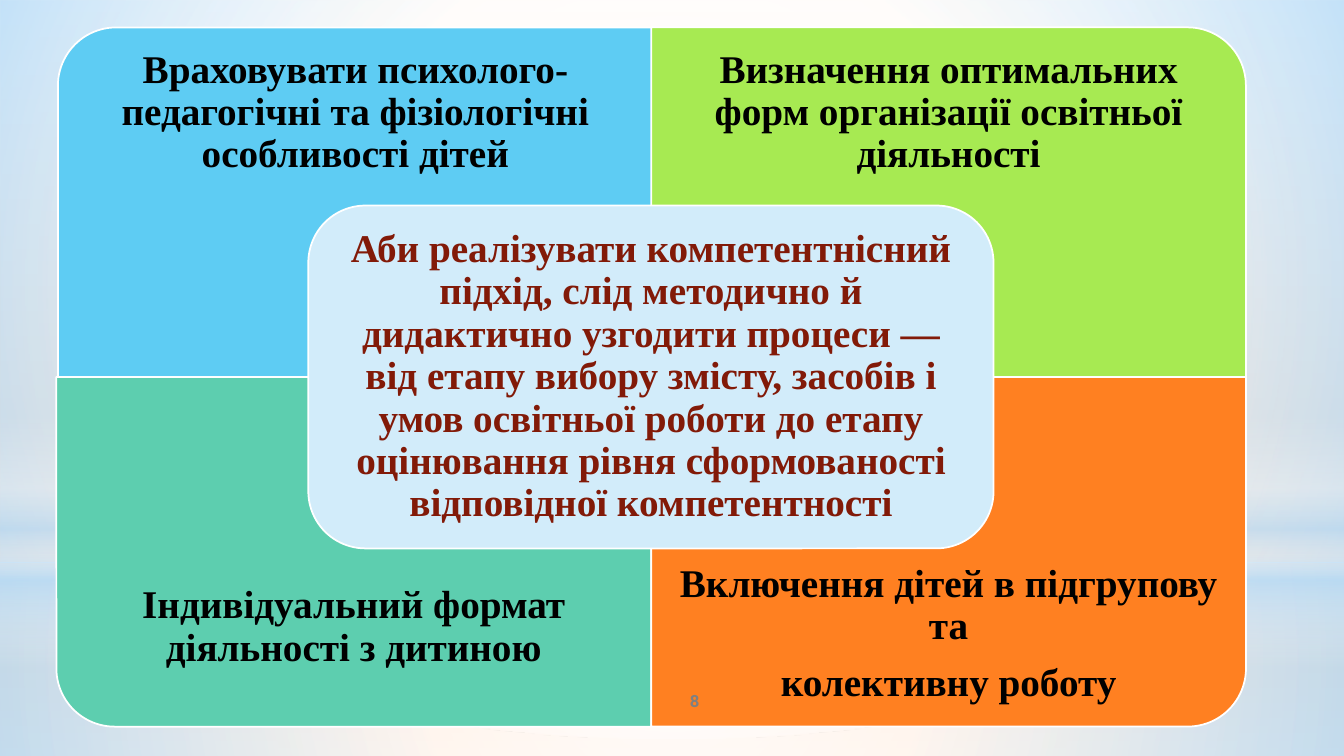
import dataclasses

import lxml.etree
import pptx
import pptx.dml.color
import pptx.enum.shapes
import pptx.enum.text
import pptx.oxml.ns
import pptx.util

Cm = pptx.util.Cm
Pt = pptx.util.Pt
Shape = pptx.enum.shapes.MSO_SHAPE
Anchor = pptx.enum.text.MSO_ANCHOR
qn = pptx.oxml.ns.qn


@dataclasses.dataclass(frozen=True)
class Theme:
    white: str = "FFFFFF"
    black: str = "000000"
    sky: str = "B4DCFA"
    blue: str = "5ECCF3"
    lime: str = "A7EA52"
    mint: str = "5DCEAF"
    orange: str = "FF8021"
    pale_blue: str = "D2ECFA"
    dark_red: str = "821A08"
    grey: str = "808080"
    peach: str = "FFC69B"
    cream: str = "FFF9F4"
    apricot: str = "FFD9BC"
    serif: str = "Times New Roman"
    sans: str = "Roboto"
    body: float = 28
    small: float = 12
    outline: float = 1.25


def rgb(color):
    return pptx.dml.color.RGBColor.from_string(color)


def write_text(frame, text, *, font, size, color, anchor=Anchor.TOP,
               inset=0.25, line_spacing=1, space_after=0):
    frame.word_wrap = True
    frame.vertical_anchor = anchor
    frame.margin_left = frame.margin_right = Cm(inset)
    frame.margin_top = frame.margin_bottom = Cm(inset)
    for index, line in enumerate(text.split("\n")):
        paragraph = frame.add_paragraph() if index else frame.paragraphs[0]
        paragraph.alignment = pptx.enum.text.PP_ALIGN.CENTER
        paragraph.line_spacing = line_spacing
        paragraph.space_after = Pt(space_after)
        run = paragraph.add_run()
        run.text = line
        run.font.name = font
        run.font.size = Pt(size)
        run.font.bold = True
        run.font.color.rgb = rgb(color)


def set_gradient(owner, fill, stops, radial):
    fill.gradient()
    gradient = next(owner.element.iter(qn("a:gradFill")))
    for child in list(gradient):
        gradient.remove(child)
    stop_list = lxml.etree.SubElement(gradient, qn("a:gsLst"))
    for position, color, opacity in stops:
        stop = lxml.etree.SubElement(stop_list, qn("a:gs"), pos=str(position * 1000))
        tint = lxml.etree.SubElement(stop, qn("a:srgbClr"), val=color)
        if opacity < 100:
            lxml.etree.SubElement(tint, qn("a:alpha"), val=str(opacity * 1000))
    if radial:
        circle = lxml.etree.SubElement(gradient, qn("a:path"), path="circle")
        lxml.etree.SubElement(circle, qn("a:fillToRect"),
                              dict.fromkeys("ltrb", "50000"))
    else:
        lxml.etree.SubElement(gradient, qn("a:lin"), ang="5400000", scaled="0")


class Composer:
    def __init__(self, slide, theme):
        self.slide = slide
        self.theme = theme

    def backdrop(self, stops):
        set_gradient(self.slide, self.slide.background.fill, stops, False)

    def shape(self, kind, left, top, width, height):
        shape = self.slide.shapes.add_shape(
            kind, Cm(left), Cm(top), Cm(width), Cm(height))
        shape.shadow.inherit = False
        return shape

    def glow(self, kind, box, stops, radial=True):
        glow = self.shape(kind, *box)
        glow.line.fill.background()
        set_gradient(glow, glow.fill, stops, radial)

    def panel(self, kind, box, color, turn=0):
        left, top, width, height = box
        if turn % 180:
            left += (width - height) / 2
            top += (height - width) / 2
            width, height = height, width
        panel = self.shape(kind, left, top, width, height)
        panel.rotation = turn
        panel.fill.solid()
        panel.fill.fore_color.rgb = rgb(color)
        panel.line.color.rgb = rgb(self.theme.white)
        panel.line.width = Pt(self.theme.outline)
        return panel

    def body(self, frame, text, color, anchor, inset):
        write_text(frame, text, font=self.theme.serif, size=self.theme.body,
                   color=color, anchor=anchor, inset=inset,
                   line_spacing=0.9, space_after=10)

    def text_box(self, left, top, width, height):
        return self.slide.shapes.add_textbox(
            Cm(left), Cm(top), Cm(width), Cm(height)).text_frame


def main():
    theme = Theme()
    deck = pptx.Presentation()
    deck.slide_width, deck.slide_height = Cm(33.87), Cm(19.05)
    composer = Composer(deck.slides.add_slide(deck.slide_layouts[6]), theme)

    composer.backdrop([(0, theme.cream, 100), (74, theme.peach, 100),
                       (83, theme.peach, 100), (100, theme.apricot, 100)])
    composer.glow(Shape.RECTANGLE, (0, 14.17, 33.87, 4.88),
                  [(0, theme.white, 91), (37, theme.white, 76), (100, theme.sky, 79)])
    composer.glow(Shape.RECTANGLE, (0, 0, 33.87, 14.17),
                  [(0, theme.white, 89), (48, theme.white, 62), (100, theme.sky, 79)])
    composer.glow(Shape.RECTANGLE, (0, 10.46, 33.87, 6.35),
                  [(0, theme.white, 0), (29, theme.white, 30), (45, theme.sky, 40),
                   (55, theme.white, 26), (65, theme.sky, 60), (100, theme.white, 0)],
                  radial=False)
    composer.glow(Shape.OVAL, (0, 4.45, 33.87, 14.17),
                  [(0, theme.white, 100), (56, theme.white, 0)])

    width, height, text_height = 14.99, 8.81, 6.6
    middle_x, top, middle_y = 16.41, 0.69, 9.5
    text_bottom = middle_y + height - text_height
    quadrants = [
        (1.46, top, 270, theme.blue, top, Anchor.TOP,
         "Враховувати психолого-педагогічні та фізіологічні особливості дітей"),
        (middle_x, top, 0, theme.lime, top, Anchor.TOP,
         "Визначення оптимальних форм організації освітньої діяльності"),
        (1.42, middle_y, 180, theme.mint, text_bottom + 0.8, Anchor.MIDDLE,
         "Індивідуальний формат діяльності з дитиною"),
        (middle_x, middle_y, 90, theme.orange, text_bottom, Anchor.BOTTOM,
         "Включення дітей в підгрупову та\nколективну роботу"),
    ]
    for left, y, turn, color, text_top, anchor, text in quadrants:
        composer.panel(Shape.ROUND_1_RECTANGLE, (left, y, width, height), color, turn)
        frame = composer.text_box(left, text_top, width, text_height)
        composer.body(frame, text, theme.black, anchor, 0.55)

    approach = composer.panel(Shape.ROUNDED_RECTANGLE, (7.77, 5.18, 17.27, 8.64),
                              theme.pale_blue)
    composer.body(
        approach.text_frame,
        "Аби реалізувати компетентнісний підхід, слід методично й дидактично "
        "узгодити процеси — від етапу вибору змісту, засобів і умов освітньої "
        "роботи до етапу оцінювання рівня сформованості відповідної компетентності",
        theme.dark_red, Anchor.MIDDLE, 0.3)

    write_text(composer.text_box(14.12, 17.15, 6.78, 1.02), "8", font=theme.sans,
               size=theme.small, color=theme.grey, anchor=Anchor.MIDDLE)

    deck.save("out.pptx")


if __name__ == "__main__":
    main()
